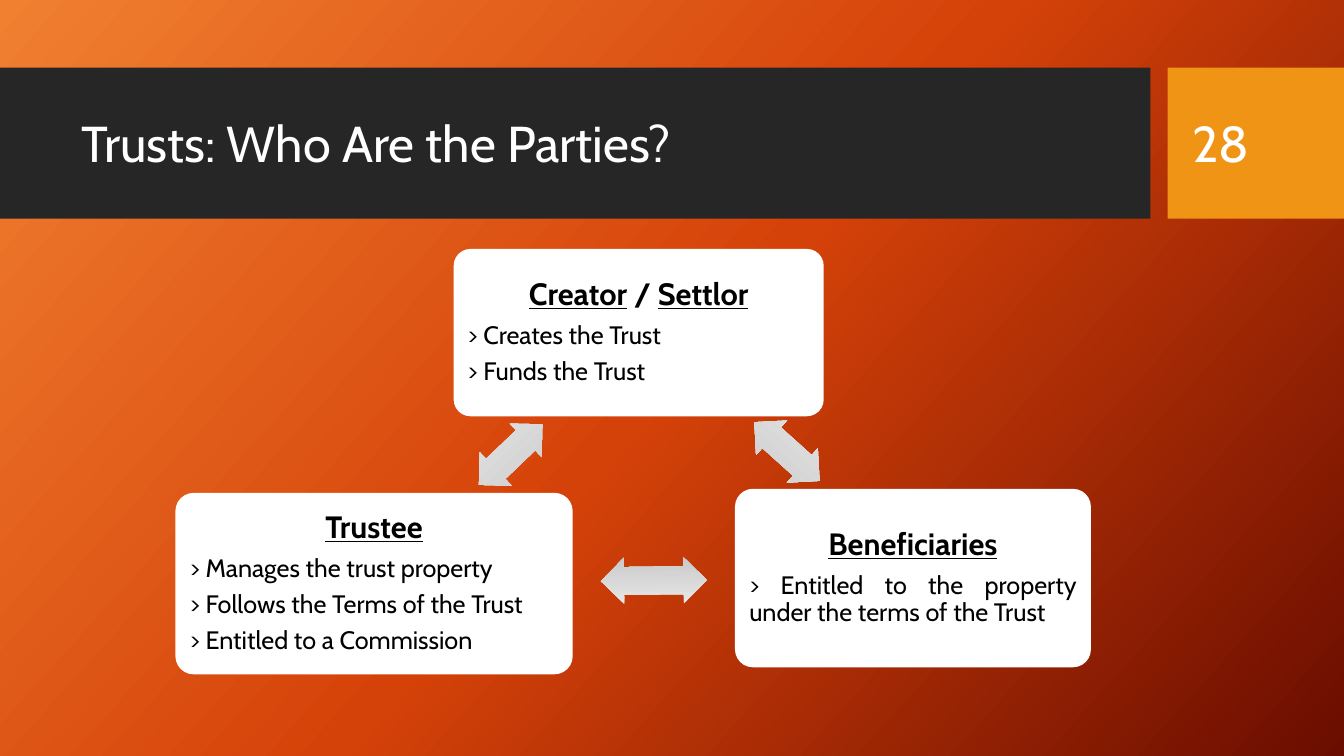
from dataclasses import dataclass

from lxml import etree
from pptx import Presentation
from pptx import util as u
from pptx.dml import color, fill
from pptx.enum import shapes, text
from pptx.oxml import ns
from pptx.shapes.autoshape import Shape
from pptx.slide import Slide
from pptx.text.text import TextFrame, _Paragraph

COLORS = {
    "band": "262626",
    "accent": "F09415",
    "white": "FFFFFF",
    "black": "000000",
    "glow": "F18031",
    "orange": "D54209",
    "maroon": "6A0D00",
    "arrow_light": "E7E7E7",
    "arrow_dark": "C9C9C9",
}
FONT = "Cabin"
HEADING_SIZE, DUTY_SIZE, TITLE_SIZE = 22, 18, 36
ALIGN = text.PP_ALIGN


@dataclass(frozen=True)
class Box:
    left: float
    top: float
    width: float
    height: float

    def lengths(self) -> list[u.Length]:
        return [u.Inches(side) for side in (self.left, self.top, self.width, self.height)]


@dataclass(frozen=True)
class Party:
    box: Box
    heading: tuple[str, ...]
    duties: tuple[str, ...]
    duty_align: ALIGN = ALIGN.LEFT


@dataclass(frozen=True)
class Arrow:
    box: Box
    rotation: float


BANDS = ((Box(0, 0.67, 11.41, 1.5), "band"), (Box(11.58, 0.67, 1.75, 1.5), "accent"))
TITLE_BOX = Box(0.71, 0.78, 10.29, 1.34)
NUMBER_BOX = Box(11.73, 0.82, 1.26, 1.19)
PARTIES = (
    Party(Box(4.5, 2.47, 3.67, 1.66), ("Creator", " / ", "Settlor"),
          ("Creates the Trust", "Funds the Trust")),
    Party(Box(7.29, 4.85, 3.53, 1.77), ("Beneficiaries",),
          ("Entitled to the property under the terms of the Trust",), ALIGN.JUSTIFY),
    Party(Box(1.74, 4.89, 3.94, 1.8), ("Trustee",),
          ("Manages the trust property", "Follows the Terms of the Trust",
           "Entitled to a Commission")),
)
ARROWS = (
    Arrow(Box(7.37, 4.25, 0.87, 0.46), 42),
    Arrow(Box(5.96, 5.53, 1.05, 0.46), 179.4),
    Arrow(Box(4.63, 4.28, 0.87, 0.46), 316.3),
)


def rgb(name: str) -> color.RGBColor:
    return color.RGBColor.from_string(COLORS[name])


def apply_format(target: object, values: dict[str, object]) -> None:
    for name, value in values.items():
        setattr(target, name, value)


def paint_gradient(target: fill.FillFormat, owner: etree._Element,
                   names: tuple[str, ...], angle: float) -> None:
    target.gradient()
    target.gradient_angle = 360 - angle
    stops = next(owner.iter(ns.qn("a:gsLst")))
    for stop in list(stops):
        stops.remove(stop)
    for index, name in enumerate(names):
        position = 100000 * index // (len(names) - 1)
        stop = etree.SubElement(stops, ns.qn("a:gs"), pos=str(position))
        etree.SubElement(stop, ns.qn("a:srgbClr"), val=COLORS[name])


def add_plain_shape(slide: Slide, kind: shapes.MSO_SHAPE, box: Box, fill_name: str) -> Shape:
    shape = slide.shapes.add_shape(kind, *box.lengths())
    shape.shadow.inherit = False
    shape.line.fill.background()
    shape.fill.solid()
    shape.fill.fore_color.rgb = rgb(fill_name)
    return shape


def add_run(paragraph: _Paragraph, words: str, size: float, color_name: str,
            bold: bool = False, underline: bool = False) -> None:
    run = paragraph.add_run()
    run.text = words
    apply_format(run.font, {"name": FONT, "size": u.Pt(size), "bold": bold,
                            "underline": underline})
    run.font.color.rgb = rgb(color_name)


def prepare_frame(frame: TextFrame, inset: float = 0.1) -> None:
    margins = {f"margin_{side}": u.Inches(inset) for side in ("left", "top", "right", "bottom")}
    apply_format(frame, margins | {"word_wrap": True, "auto_size": text.MSO_AUTO_SIZE.NONE,
                                   "vertical_anchor": text.MSO_ANCHOR.MIDDLE})


def space_paragraph(paragraph: _Paragraph, align: ALIGN, size: float) -> None:
    apply_format(paragraph, {"alignment": align, "line_spacing": 0.9,
                             "space_after": u.Pt(0.35 * size)})


def add_party(slide: Slide, party: Party) -> None:
    card = add_plain_shape(slide, shapes.MSO_SHAPE.ROUNDED_RECTANGLE, party.box, "white")
    card.adjustments[0] = 0.1
    frame = card.text_frame
    prepare_frame(frame, 0.09)
    heading = frame.paragraphs[0]
    space_paragraph(heading, ALIGN.CENTER, HEADING_SIZE)
    for words in party.heading:
        add_run(heading, words, HEADING_SIZE, "black", True, words != " / ")
    for duty in party.duties:
        paragraph = frame.add_paragraph()
        space_paragraph(paragraph, party.duty_align, DUTY_SIZE)
        add_run(paragraph, f"> {duty}", DUTY_SIZE, "black")


def add_arrow(slide: Slide, arrow: Arrow) -> None:
    shape = add_plain_shape(slide, shapes.MSO_SHAPE.LEFT_RIGHT_ARROW, arrow.box, "arrow_light")
    shape.rotation = arrow.rotation
    shape.adjustments[0] = 0.6
    shape.adjustments[1] = 0.5
    paint_gradient(shape.fill, shape.element, ("arrow_light", "arrow_dark"), 90)


def write_title(slide: Slide) -> None:
    title = slide.shapes.title
    title.element.getparent().append(title.element)
    apply_format(title, dict(zip(("left", "top", "width", "height"), TITLE_BOX.lengths())))
    prepare_frame(title.text_frame)
    paragraph = title.text_frame.paragraphs[0]
    apply_format(paragraph, {"alignment": ALIGN.LEFT, "line_spacing": 0.9})
    add_run(paragraph, "Trusts: Who Are the Parties?", TITLE_SIZE, "white")


def write_number(slide: Slide) -> None:
    frame = slide.shapes.add_textbox(*NUMBER_BOX.lengths()).text_frame
    prepare_frame(frame)
    add_run(frame.paragraphs[0], "28", TITLE_SIZE, "white")


def main() -> None:
    presentation = Presentation()
    presentation.slide_width = u.Inches(13.33)
    presentation.slide_height = u.Inches(7.5)
    slide = presentation.slides.add_slide(presentation.slide_layouts.get_by_name("Title Only"))
    paint_gradient(slide.background.fill, slide.element, ("glow", "orange", "maroon"), 42)
    for box, fill_name in BANDS:
        add_plain_shape(slide, shapes.MSO_SHAPE.RECTANGLE, box, fill_name)
    write_title(slide)
    for party in PARTIES:
        add_party(slide, party)
    for arrow in ARROWS:
        add_arrow(slide, arrow)
    write_number(slide)
    presentation.save("out.pptx")


if __name__ == "__main__":
    main()
